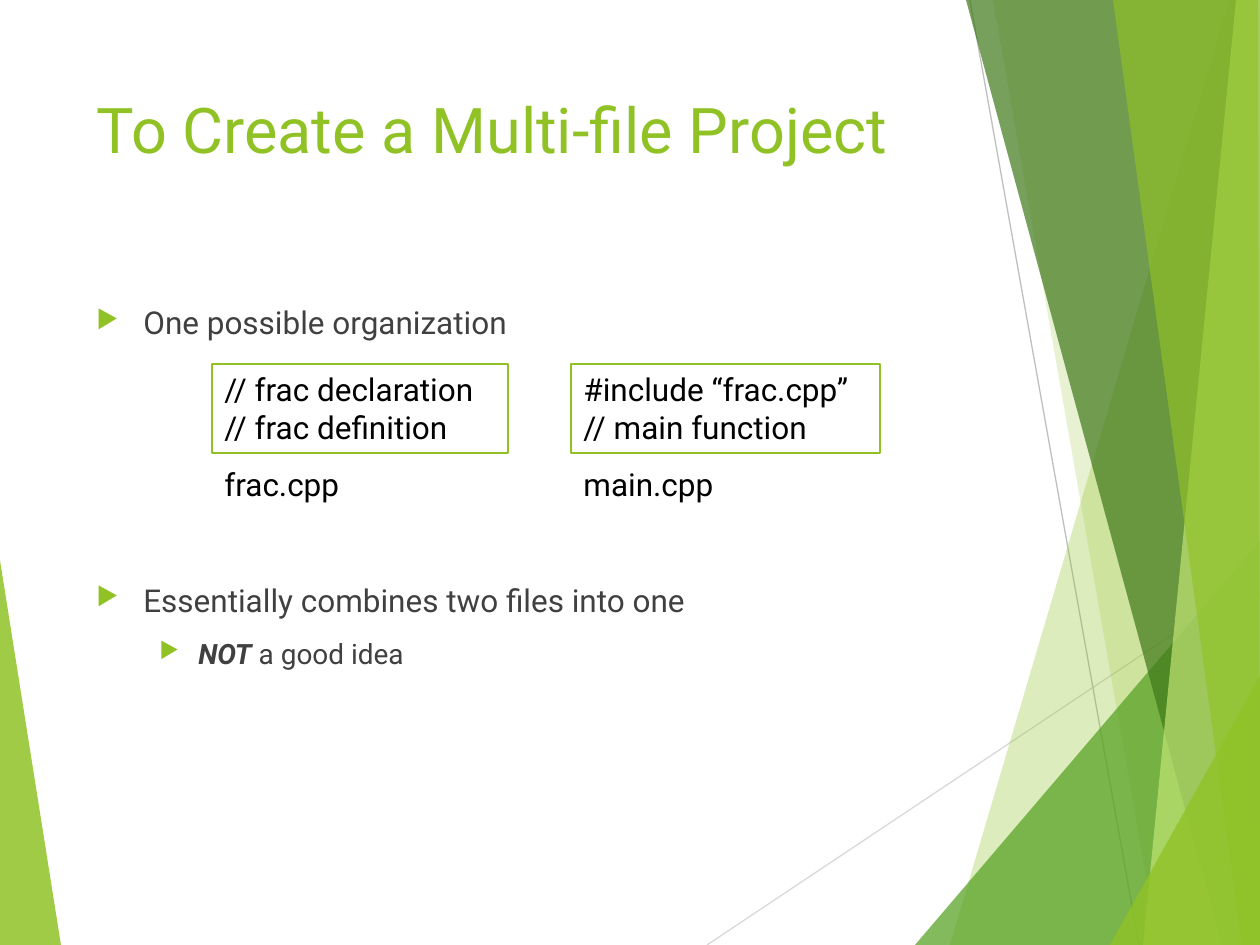
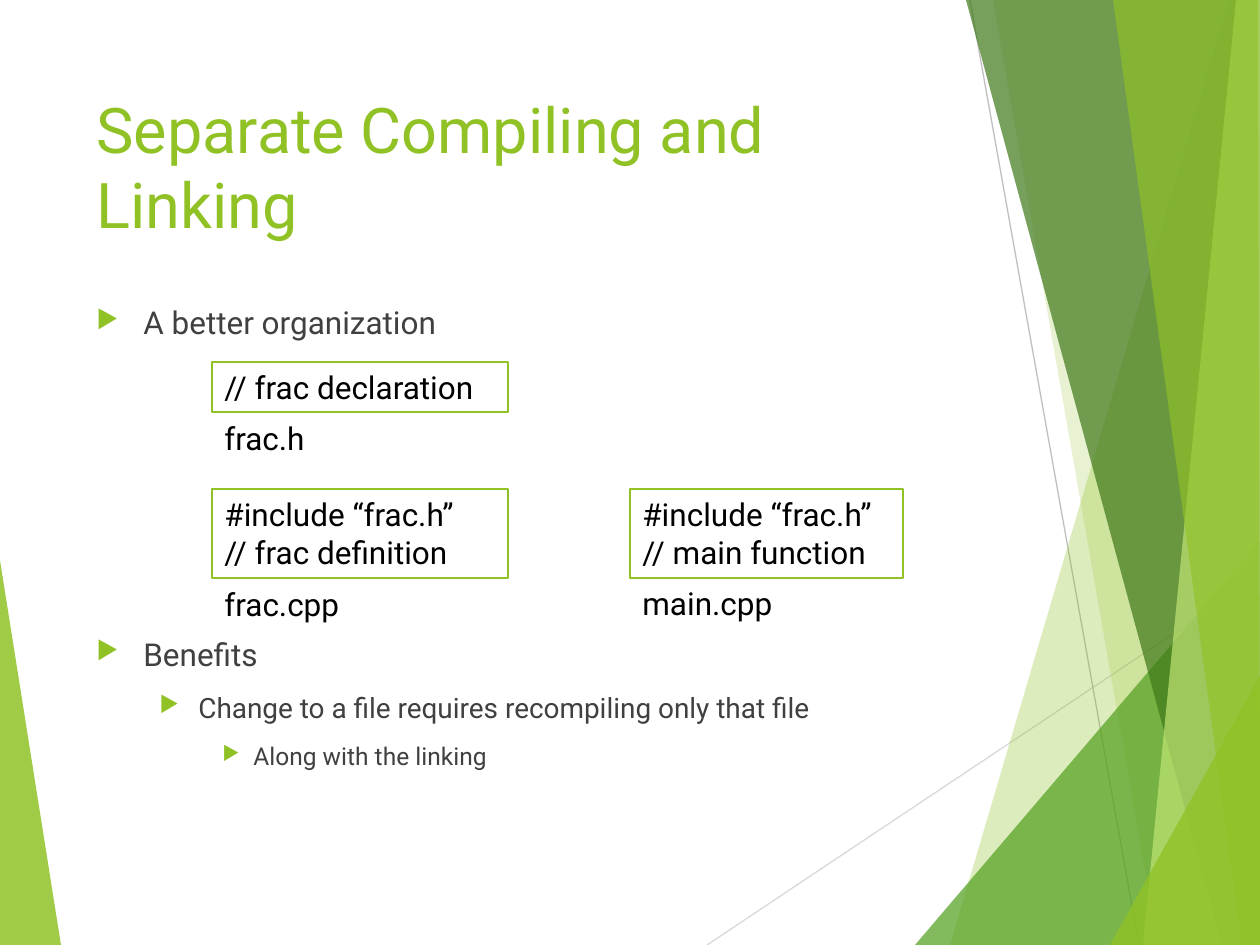
from lxml import etree
from pptx import Presentation
from pptx import util as u
from pptx.dml.color import RGBColor
from pptx.enum import shapes, text
from pptx.oxml.ns import qn

SCALE = 914400 / 126
FONT = "Roboto"
COLORS = {
    "lime": "90C226",
    "green": "54A021",
    "forest": "3F7819",
    "pale": "C0E474",
    "silver": "D9D9D9",
    "gray": "BFBFBF",
    "body": "404040",
    "black": "000000",
}
LEVELS = [(18, 47, -47), (16, 102, -39), (14, 157, -31)]

LINES = [
    ("silver", 707, 945, 1260, 576),
    ("gray", 970, 0, 1139, 945),
]
FACETS = [
    ("lime", 85, [(0, 560), (61, 945), (0, 945)]),
    ("lime", 30, [(1229, 0), (950, 945), (1260, 945), (1260, 0)]),
    ("lime", 20, [(993, 0), (1158, 945), (1260, 945), (1260, 0)]),
    ("green", 72, [(915, 945), (1260, 541), (1260, 945)]),
    ("forest", 70, [(966, 0), (1222, 945), (1260, 945), (1260, 0)]),
    ("pale", 70, [(1236, 0), (1143, 945), (1260, 945), (1260, 0)]),
    ("lime", 65, [(1113, 0), (1242, 945), (1260, 945), (1258, 0)]),
    ("lime", 80, [(1110, 945), (1260, 676), (1260, 945)]),
]

SLIDES = [
    {
        "title": "To Create a Multi-file Project",
        "bullets": [
            (0, 0, [("One possible organization", False)]),
            (0, 137, [("Essentially combines two files into one", False)]),
            (1, 10, [("NOT", True), (" a good idea", False)]),
        ],
        "boxes": [
            (212, 364, 296, 89, ["// frac declaration", "// frac definition"]),
            (571, 364, 309, 89, ["#include “frac.cpp”", "// main function"]),
        ],
        "labels": [
            (212, 459, 145, "frac.cpp"),
            (571, 459, 158, "main.cpp"),
        ],
    },
    {
        "title": "Separate Compiling and Linking",
        "bullets": [
            (0, 0, [("A better organization", False)]),
            (0, 168, [("Benefits", False)]),
            (1, 10, [("Change to a file requires recompiling only that file", False)]),
            (2, 10, [("Along with the linking", False)]),
        ],
        "boxes": [
            (212, 362, 296, 50, ["// frac declaration"]),
            (212, 489, 296, 89, ["#include “frac.h”", "// frac definition"]),
            (630, 489, 273, 89, ["#include “frac.h”", "// main function"]),
        ],
        "labels": [
            (212, 413, 111, "frac.h"),
            (212, 579, 145, "frac.cpp"),
            (630, 578, 158, "main.cpp"),
        ],
    },
]


def px(*values):
    return [u.Emu(round(v * SCALE)) for v in values]


def add_run(p, words, size, color, strong=False):
    p.alignment = text.PP_ALIGN.LEFT
    r = p.add_run()
    r.text = words
    r.font.name = FONT
    r.font.size = u.Pt(size)
    r.font.color.rgb = RGBColor.from_string(COLORS[color])
    r.font.bold = r.font.italic = strong


prs = Presentation()
prs.slide_width, prs.slide_height = px(1260, 945)
layout = prs.slide_layouts[5]

for number, content in enumerate(SLIDES):
    s = prs.slides.add_slide(layout)

    if number == 0:
        backdrop = []
        for color, *ends in LINES:
            line = s.shapes.add_connector(shapes.MSO_CONNECTOR.STRAIGHT, *px(*ends))
            line.line.color.rgb = RGBColor.from_string(COLORS[color])
            line.line.width = u.Pt(0.75)
            etree.SubElement(line.element.spPr, qn("a:effectLst"))
            backdrop.append(line)
        for color, opacity, points in FACETS:
            builder = s.shapes.build_freeform(*points[0], scale=SCALE)
            builder.add_line_segments(points[1:], close=True)
            sp = builder.convert_to_shape()
            sp.shadow.inherit = False
            sp.fill.solid()
            sp.fill.fore_color.rgb = RGBColor.from_string(COLORS[color])
            sp.line.fill.background()
            tint = sp.element.spPr.find(".//" + qn("a:srgbClr"))
            etree.SubElement(tint, qn("a:alpha"), val=str(opacity * 1000))
            backdrop.append(sp)
        backdrop.insert(0, backdrop.pop(2))
        for i, sp in enumerate(backdrop):
            sp.element.xpath("./*/p:cNvPr")[0].set("id", str(100 + i))
            layout.shapes.element.insert(2 + i, sp.element)

    title = s.shapes.title
    title.left, title.top, title.width, title.height = px(84, 84, 875, 181)
    tf = title.text_frame
    tf.word_wrap = True
    tf.auto_size = text.MSO_AUTO_SIZE.NONE
    tf.vertical_anchor = text.MSO_ANCHOR.TOP
    add_run(tf.paragraphs[0], content["title"], 36, "lime")

    tf = s.shapes.add_textbox(*px(84, 297, 875, 534)).text_frame
    tf.word_wrap = True
    for i, (level, gap, runs) in enumerate(content["bullets"]):
        p = tf.add_paragraph() if i else tf.paragraphs[0]
        p.level = level
        p.space_before = u.Pt(gap)
        size, margin, indent = LEVELS[level]
        for words, strong in runs:
            add_run(p, words, size, "body", strong)
        pPr = p._p.get_or_add_pPr()
        margin, indent = px(margin, indent)
        pPr.set("marL", str(margin))
        pPr.set("indent", str(indent))
        bullet_color = etree.SubElement(pPr, qn("a:buClr"))
        etree.SubElement(bullet_color, qn("a:srgbClr"), val=COLORS["lime"])
        etree.SubElement(pPr, qn("a:buSzPct"), val="80000")
        etree.SubElement(pPr, qn("a:buChar"), char="▶")

    for *frame, code in content["boxes"]:
        sp = s.shapes.add_shape(shapes.MSO_SHAPE.RECTANGLE, *px(*frame))
        sp.shadow.inherit = False
        sp.fill.background()
        sp.line.color.rgb = RGBColor.from_string(COLORS["lime"])
        sp.line.width = u.Pt(0.75)
        tf = sp.text_frame
        tf.word_wrap = True
        tf.vertical_anchor = text.MSO_ANCHOR.TOP
        for i, words in enumerate(code):
            p = tf.add_paragraph() if i else tf.paragraphs[0]
            add_run(p, words, 18, "black")

    for left, top, width, words in content["labels"]:
        tf = s.shapes.add_textbox(*px(left, top, width, 50)).text_frame
        tf.word_wrap = True
        add_run(tf.paragraphs[0], words, 18, "black")

prs.save("out.pptx")
